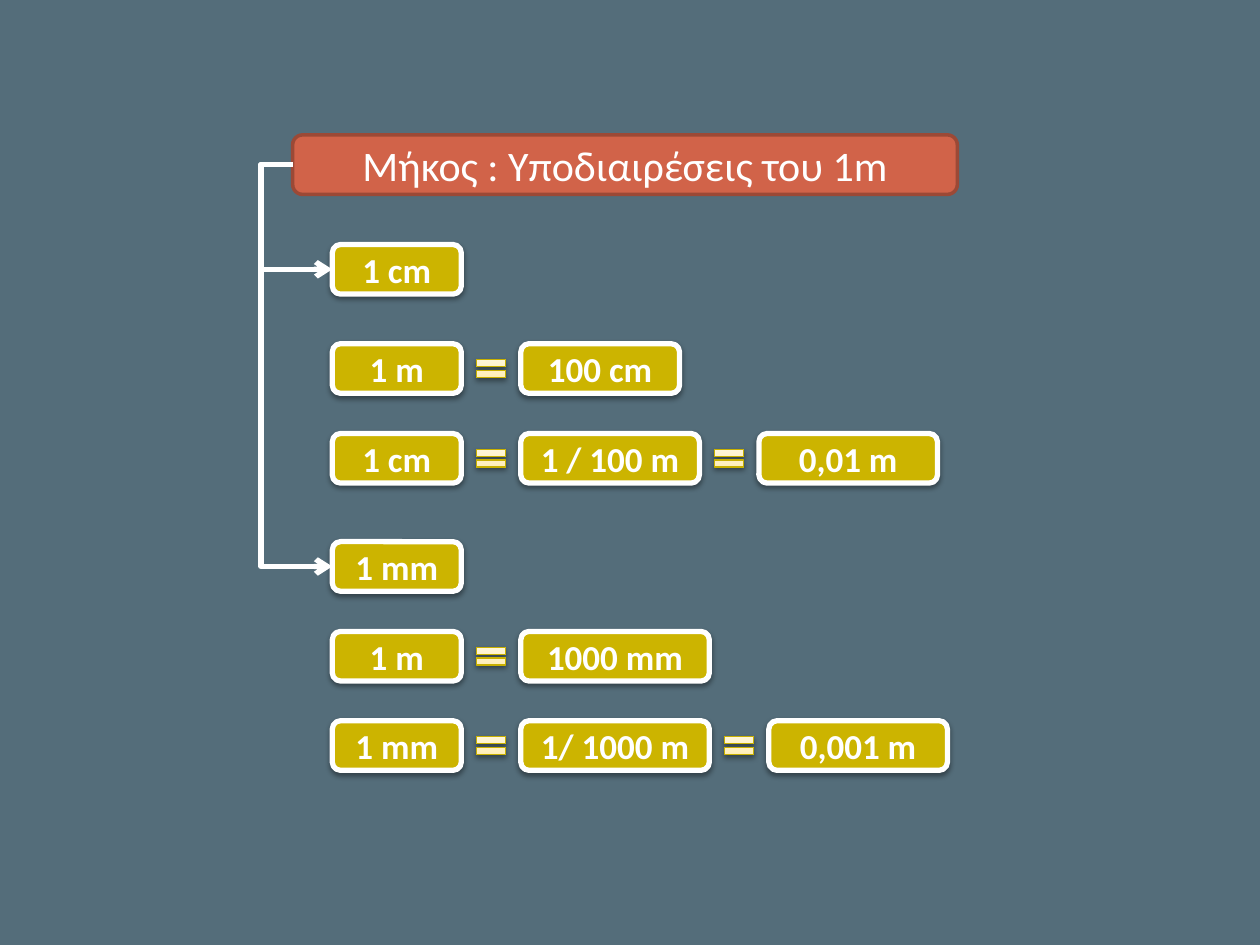
from copy import deepcopy

from lxml.etree import SubElement
from pptx import Presentation
from pptx.dml.color import RGBColor
from pptx.enum.shapes import MSO_CONNECTOR, MSO_SHAPE
from pptx.enum.text import MSO_ANCHOR, PP_ALIGN
from pptx.oxml.ns import qn
from pptx.util import Cm, Pt

COLOURS = {
    "background": "546D7A",
    "title": "D16349",
    "title_line": "9B4936",
    "box": "CCB400",
    "white": "FFFFFF",
    "equals_line": "C8B000",
    "shadow": "000000",
}
EQUALS_STOPS = [(0, "FFEBA5"), (0.35, "FFF0BF"), (1, "FFF9E7")]

BOX_LEFT, BOX_HEIGHT, LABEL_WIDTH = 6.7, 1, 2.6
EQUALS_WIDTH, EQUALS_HEIGHT, GAP = 0.8, 0.6, 0.2

UNIT_ROWS = [(4.93, "1 cm"), (10.92, "1 mm")]
EQUATION_ROWS = [
    (6.93, [("1 m", LABEL_WIDTH), ("100 cm", 3.2)]),
    (8.74, [("1 cm", LABEL_WIDTH), ("1 / 100 m", 3.6), ("0,01 m", 3.6)]),
    (12.73, [("1 m", LABEL_WIDTH), ("1000 mm", 3.8)]),
    (14.53, [("1 mm", LABEL_WIDTH), ("1/ 1000 m", 3.8), ("0,001 m", 3.6)]),
]


class SlideBuilder:
    """Hold the style and the current slide, and draw each kind of element."""

    def __init__(self, slide):
        self.slide = slide
        self.font = "Calibri"
        slide.background.fill.solid()
        slide.background.fill.fore_color.rgb = self.colour("background")

    def colour(self, name):
        return RGBColor.from_string(COLOURS[name])

    def shape(self, kind, left, top, width, height, line, line_width):
        shape = self.slide.shapes.add_shape(
            kind, Cm(left), Cm(top), Cm(width), Cm(height))
        shape.shadow.inherit = False
        shape.line.color.rgb = self.colour(line)
        shape.line.width = Pt(line_width)
        return shape

    def cast_shadow(self, shape):
        effects = shape._element.spPr.find(qn("a:effectLst"))
        shadow = SubElement(
            effects, qn("a:outerShdw"), blurRad=str(Pt(3.1)),
            dist=str(Pt(1.6)), dir="5400000", rotWithShape="0")
        tone = SubElement(shadow, qn("a:srgbClr"), val=COLOURS["shadow"])
        SubElement(tone, qn("a:alpha"), val="38000")

    def text_box(self, text, left, top, width, height, fill, line,
                 line_width, size, bold):
        shape = self.shape(MSO_SHAPE.ROUNDED_RECTANGLE, left, top, width,
                           height, line, line_width)
        shape.fill.solid()
        shape.fill.fore_color.rgb = self.colour(fill)
        shape.text_frame.text = text
        shape.text_frame.vertical_anchor = MSO_ANCHOR.MIDDLE
        paragraph = shape.text_frame.paragraphs[0]
        paragraph.alignment = PP_ALIGN.CENTER
        font = paragraph.runs[0].font
        font.name, font.size, font.bold = self.font, Pt(size), bold
        font.color.rgb = self.colour("white")
        return shape

    def title(self, text, left, top, width, height):
        return self.text_box(text, left, top, width, height, "title",
                             "title_line", 2, 24, False)

    def box(self, text, left, top, width):
        shape = self.text_box(text, left, top, width, BOX_HEIGHT, "box",
                              "white", 3, 20, True)
        self.cast_shadow(shape)
        return shape

    def equals(self, left, row_top):
        top = row_top + (BOX_HEIGHT - EQUALS_HEIGHT) / 2
        shape = self.shape(MSO_SHAPE.MATH_EQUAL, left, top, EQUALS_WIDTH,
                           EQUALS_HEIGHT, "equals_line", 0.75)
        shape.fill.gradient()
        shape.fill.gradient_angle = 90
        stop_list = shape._element.spPr.find(".//" + qn("a:gsLst"))
        stop_list.append(deepcopy(stop_list[0]))
        for stop, (position, tone) in zip(shape.fill.gradient_stops, EQUALS_STOPS):
            stop.position = position
            stop.color.rgb = RGBColor.from_string(tone)
        self.cast_shadow(shape)

    def equation(self, top, terms):
        left = BOX_LEFT
        for index, (text, width) in enumerate(terms):
            if index:
                self.equals(left, top)
                left += EQUALS_WIDTH + GAP
            self.box(text, left, top, width)
            left += width + GAP

    def elbow_arrow(self, start, end):
        connector = self.slide.shapes.add_connector(
            MSO_CONNECTOR.ELBOW, start.left, start.top + start.height // 2,
            end.left, end.top + end.height // 2)
        connector.begin_connect(start, 1)
        connector.end_connect(end, 1)
        connector.line.color.rgb = self.colour("white")
        connector.line.width = Pt(3)
        properties = connector._element.spPr
        adjustments = properties.find(qn("a:prstGeom")).get_or_add_avLst()
        SubElement(adjustments, qn("a:gd"), name="adj1", fmla="val -79400")
        SubElement(properties.find(qn("a:ln")), qn("a:tailEnd"), type="arrow")
        SubElement(properties, qn("a:effectLst"))


def main():
    presentation = Presentation()
    presentation.slide_width, presentation.slide_height = Cm(25.4), Cm(19.05)
    slide = presentation.slides.add_slide(presentation.slide_layouts[6])
    builder = SlideBuilder(slide)

    title = builder.title("Μήκος : Υποδιαιρέσεις του 1m", 5.9, 2.72, 13.4, 1.2)
    for top, unit in UNIT_ROWS:
        unit_box = builder.box(unit, BOX_LEFT, top, LABEL_WIDTH)
        builder.elbow_arrow(title, unit_box)
    for top, terms in EQUATION_ROWS:
        builder.equation(top, terms)

    presentation.save("out.pptx")


if __name__ == "__main__":
    main()
